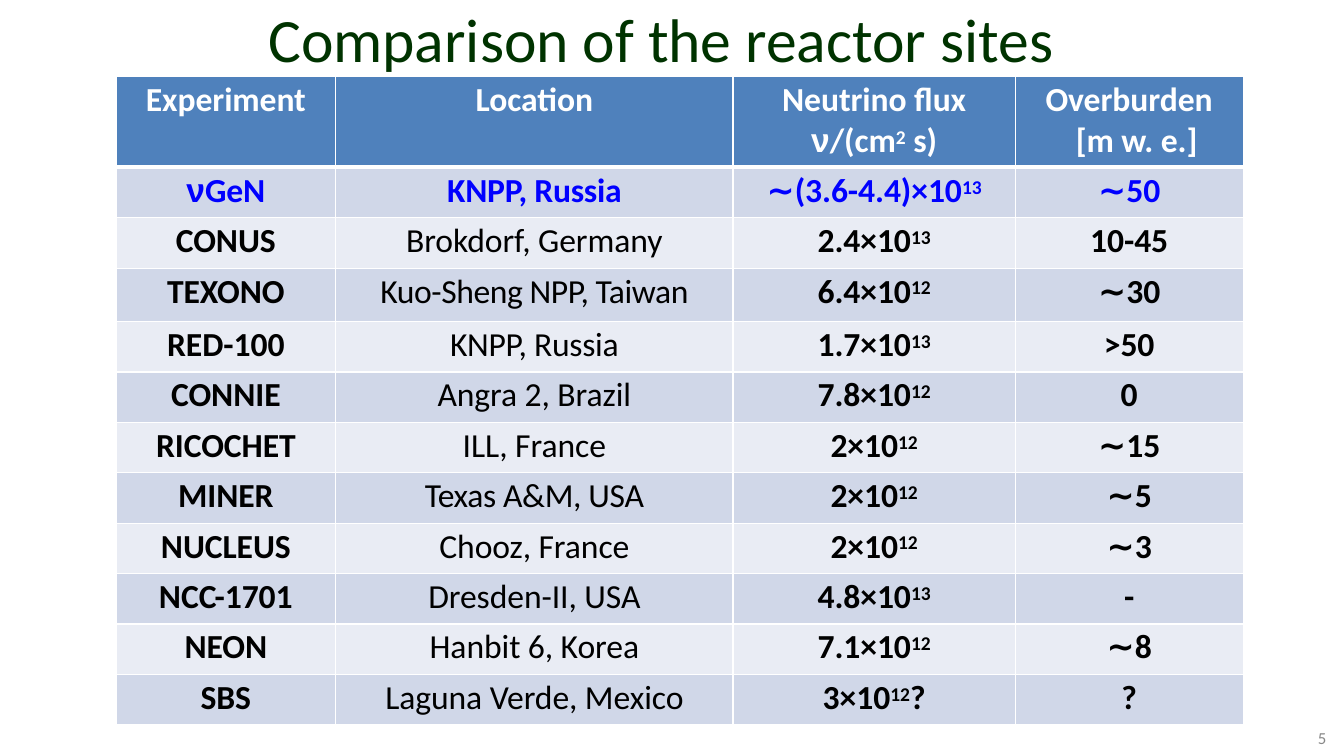
from itertools import groupby

from lxml.etree import fromstring
from pptx import Presentation
from pptx.dml.color import RGBColor
from pptx.enum.text import MSO_ANCHOR, MSO_AUTO_SIZE, PP_ALIGN
from pptx.oxml.ns import nsdecls
from pptx.util import Inches, Pt

TITLE = "Comparison of the reactor sites"
PAGE = "5"
HEADER = ("Experiment", "Location", "Neutrino flux\nν/(cm^2^ s)", "Overburden [m w. e.]")
SITES = [
    ("νGeN", "KNPP, Russia", "∼(3.6-4.4)×10^13^", "∼50"),
    ("CONUS", "Brokdorf, Germany", "2.4×10^13^", "10-45"),
    ("TEXONO", "Kuo-Sheng NPP, Taiwan", "6.4×10^12^", "∼30"),
    ("RED-100", "KNPP, Russia", "1.7×10^13^", ">50"),
    ("CONNIE", "Angra 2, Brazil", "7.8×10^12^", "0"),
    ("RICOCHET", "ILL, France", "2×10^12^", "∼15"),
    ("MINER", "Texas A&M, USA", "2×10^12^", "∼5"),
    ("NUCLEUS", "Chooz, France", "2×10^12^", "∼3"),
    ("NCC-1701", "Dresden-II, USA", "4.8×10^13^", "-"),
    ("NEON", "Hanbit 6, Korea", "7.1×10^12^", "∼8"),
    ("SBS", "Laguna Verde, Mexico", "3×10^12^?", "?"),
]
COL_WIDTHS = (2.18, 3.94, 2.8, 2.26)
ROW_HEIGHTS = [0.9, 0.5, 0.5, 0.53] + [0.5] * 8
TIGHT = {"KNPP, Russia": -20, "Kuo-Sheng NPP, Taiwan": -30, "Texas A&M, USA": -25}

WHITE = RGBColor(0xFF, 0xFF, 0xFF)
BLACK = RGBColor(0, 0, 0)
BLUE = RGBColor(0, 0, 0xFF)
GREEN = RGBColor(0, 0x33, 0)
GREY = RGBColor(0x88, 0x88, 0x88)
HEADER_FILL = RGBColor(0x4F, 0x81, 0xBC)
BANDS = (RGBColor(0xE9, 0xEC, 0xF4), RGBColor(0xD0, 0xD7, 0xE8))


def set_margins(obj, top=0):
    obj.margin_left = obj.margin_right = obj.margin_bottom = 0
    obj.margin_top = Inches(top)


def style(font, size, color, bold=False, name="Calibri"):
    font.name, font.size, font.bold = name, Pt(size), bold
    font.color.rgb = color


def add_runs(p, text, color, bold):
    for i, part in enumerate(text.split("^")):
        for is_symbol, chars in groupby(part, lambda ch: ch in "ν∼"):
            r = p.add_run()
            r.text = "".join(chars)
            style(r.font, 24, color, bold, "Arial" if is_symbol else "Calibri")
            rPr = r._r.get_or_add_rPr()
            rPr.set("spc", str(TIGHT.get(text, -5)))
            if i % 2:
                rPr.set("baseline", "24000")


def set_borders(cell, top, bottom):
    tcPr = cell._tc.get_or_add_tcPr()
    for i, (side, width) in enumerate(zip("LRTB", (1, 1, top, bottom))):
        tcPr.insert(i, fromstring(
            f'<a:ln{side} {nsdecls("a")} w="{Pt(width)}"><a:solidFill>'
            f'<a:srgbClr val="{WHITE}"/></a:solidFill></a:ln{side}>'))


def fill_cell(cell, text, row, col):
    if row == 0:
        color, fill = WHITE, HEADER_FILL
    else:
        color, fill = BLUE if row == 1 else BLACK, BANDS[row % 2]
    set_margins(cell, 0.03)
    cell.fill.solid()
    cell.fill.fore_color.rgb = fill
    set_borders(cell, 3 if row == 1 else 1, 3 if row == 0 else 1)
    tf = cell.text_frame
    for i, line in enumerate(text.split("\n")):
        p = tf.add_paragraph() if i else tf.paragraphs[0]
        p.alignment = PP_ALIGN.CENTER
        p.space_before = Pt(0.2 if i else 2)
        add_runs(p, line, color, col != 1 or row < 2)


prs = Presentation()
prs.slide_width, prs.slide_height = Inches(13.33), Inches(7.5)
s = prs.slides.add_slide(prs.slide_layouts[5])

title = s.shapes.title
title.left, title.top, title.width, title.height = map(Inches, (2.66, 0, 7.85, 0.76))
tf = title.text_frame
tf.text = TITLE
tf.word_wrap = False
tf.auto_size = MSO_AUTO_SIZE.NONE
tf.vertical_anchor = MSO_ANCHOR.TOP
set_margins(tf, 0.01)
p = tf.paragraphs[0]
p.alignment = PP_ALIGN.LEFT
p.space_before = Pt(1)
style(p.font, 44, GREEN)

table = s.shapes.add_table(
    len(ROW_HEIGHTS), len(COL_WIDTHS), Inches(1.15), Inches(0.76),
    Inches(sum(COL_WIDTHS)), Inches(sum(ROW_HEIGHTS))).table
for column, width in zip(table.columns, COL_WIDTHS):
    column.width = Inches(width)
for row, (values, height) in enumerate(zip([HEADER] + SITES, ROW_HEIGHTS)):
    table.rows[row].height = Inches(height)
    for col, text in enumerate(values):
        fill_cell(table.cell(row, col), text, row, col)

p = table.cell(0, 3).text_frame.paragraphs[0]
p.alignment = PP_ALIGN.LEFT
pPr = p._p.get_or_add_pPr()
pPr.set("marL", str(Inches(0.6)))
pPr.set("indent", str(Inches(-0.3)))

number = s.shapes.add_textbox(*map(Inches, (13.04, 7.22, 0.24, 0.23)))
tf = number.text_frame
tf.text = PAGE
tf.word_wrap = True
set_margins(tf)
p = tf.paragraphs[0]
p._p.get_or_add_pPr().set("marL", str(Inches(0.03)))
style(p.font, 12, GREY)

prs.save("out.pptx")
